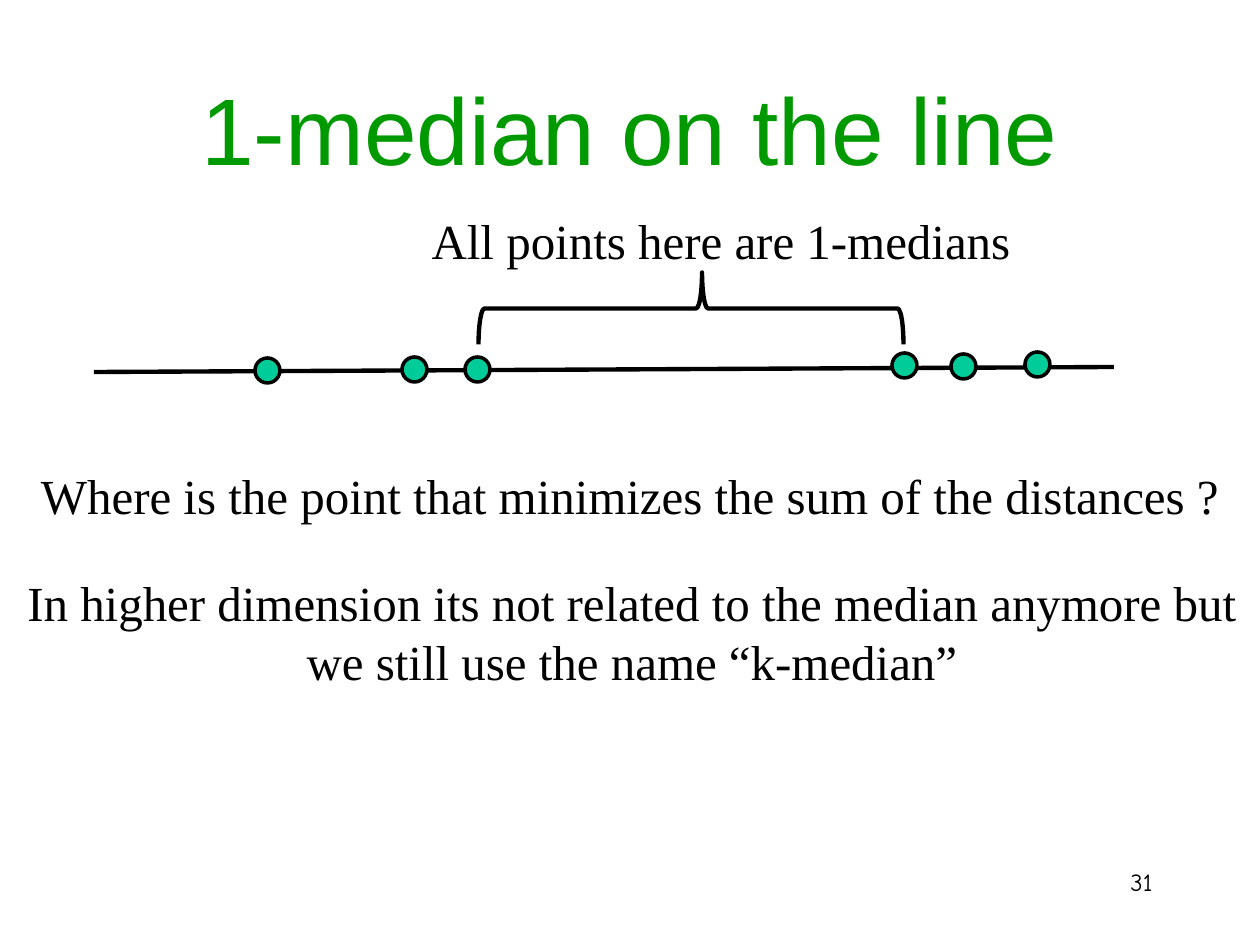
import pptx
import pptx.dml.color
import pptx.enum.shapes
import pptx.enum.text
import pptx.oxml.ns
import pptx.util
import lxml.etree

EMU_PER_PX = 914400 / 126
COLORS = {"title": "009900", "ink": "000000", "point": "00CC99", "paper": "FFFFFF"}
ALIGN = pptx.enum.text.PP_ALIGN
ANCHOR = pptx.enum.text.MSO_ANCHOR
SHAPE = pptx.enum.shapes.MSO_SHAPE
POINT_SIZE = 25
# Left and top of each point, from left to right
POINTS = [(255, 358), (402, 357), (465, 357), (892, 353), (951, 354), (1025, 352)]


def px(*lengths):
    return [pptx.util.Emu(round(length * EMU_PER_PX)) for length in lengths]


def rgb(name):
    return pptx.dml.color.RGBColor.from_string(COLORS[name])


def style_line(line, width):
    line.color.rgb = rgb("ink")
    line.width = pptx.util.Pt(width)


def add_text(slide, box, text, size=28, font="Times New Roman", color="ink",
             align=ALIGN.CENTER, anchor=ANCHOR.TOP):
    frame = slide.shapes.add_textbox(*px(*box)).text_frame
    frame.word_wrap = True
    frame.vertical_anchor = anchor
    paragraph = frame.paragraphs[0]
    paragraph.text = text
    paragraph.alignment = align
    run_font = paragraph.runs[0].font
    run_font.size = pptx.util.Pt(size)
    run_font.name = font
    run_font.color.rgb = rgb(color)


def add_number_line(slide, start, end):
    number_line = slide.shapes.add_connector(
        pptx.enum.shapes.MSO_CONNECTOR.STRAIGHT, *px(*start, *end))
    style_line(number_line.line, 2.5)
    lxml.etree.SubElement(number_line._element.spPr, pptx.oxml.ns.qn("a:effectLst"))


def add_point(slide, left, top):
    point = slide.shapes.add_shape(SHAPE.OVAL, *px(left, top, POINT_SIZE, POINT_SIZE))
    point.shadow.inherit = False
    point.fill.solid()
    point.fill.fore_color.rgb = rgb("point")
    style_line(point.line, 2)


def add_median_brace(slide, box):
    """Left brace turned to open downwards over the median interval."""
    brace = slide.shapes.add_shape(SHAPE.LEFT_BRACE, *px(*box))
    brace.rotation = 90
    brace.adjustments[0] = 0.083
    brace.adjustments[1] = 0.474
    brace.shadow.inherit = False
    brace.fill.background()
    style_line(brace.line, 2.5)


def main():
    presentation = pptx.Presentation()
    presentation.slide_width, presentation.slide_height = px(1260, 945)
    slide = presentation.slides.add_slide(presentation.slide_layouts[6])
    slide.background.fill.solid()
    slide.background.fill.fore_color.rgb = rgb("paper")

    add_text(slide, (94, 49, 1071, 158), "1-median on the line", 54, "Arial",
             "title", anchor=ANCHOR.MIDDLE)
    add_text(slide, (903, 861, 262, 63), "31", 14, "Comic Neue", align=ALIGN.RIGHT)
    add_number_line(slide, (94, 372), (1114, 367))
    for left, top in POINTS:
        add_point(slide, left, top)
    add_text(slide, (0, 459, 1260, 72),
             "Where is the point that minimizes the sum of the distances ?")
    add_median_brace(slide, (655, 96, 72, 425))
    add_text(slide, (375, 204, 692, 72), "All points here are 1-medians")
    add_text(slide, (2, 566, 1260, 131),
             "In higher dimension its not related to the median anymore but "
             "we still use the name “k-median”")
    presentation.save("out.pptx")


if __name__ == "__main__":
    main()
